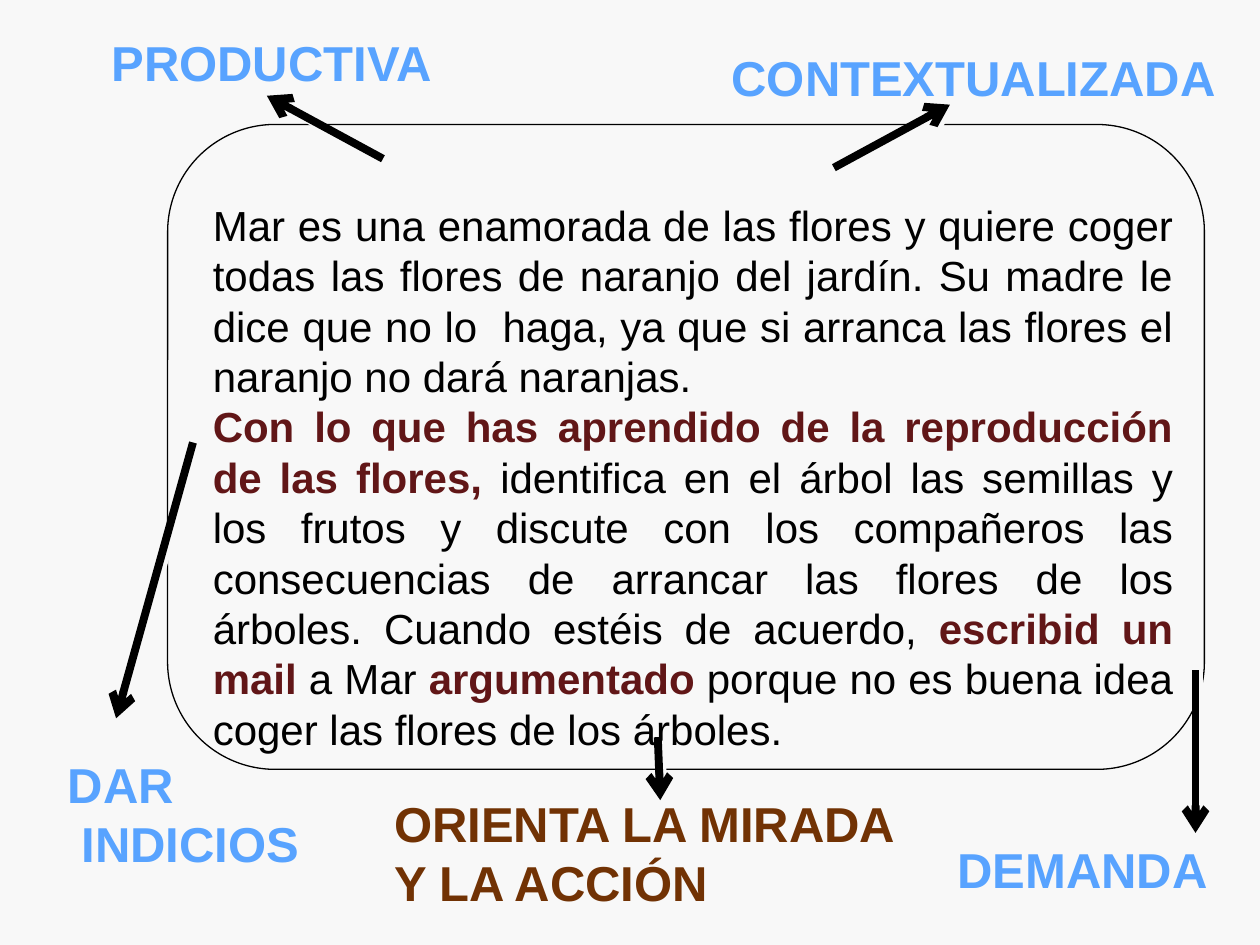
import pptx
import pptx.util
import pptx.dml.color
import pptx.enum.shapes
import pptx.enum.text
import pptx.oxml
import pptx.oxml.ns
from pptx.util import Cm, Pt

COLORS = {"back": "F8F8F8", "ink": "000000", "label": "58A3FF",
          "key": "611617", "focus": "713204"}


def rgb(name):
    return pptx.dml.color.RGBColor.from_string(COLORS[name])


def style(r, size, color, bold):
    r.font.name = "Arial"
    r.font.size = Pt(size)
    r.font.bold = bold
    r.font.color.rgb = rgb(color)


def add_text(shapes, box, wrap):
    tf = shapes.add_textbox(*(Cm(v) for v in box)).text_frame
    tf.word_wrap = wrap
    tf.auto_size = pptx.enum.text.MSO_AUTO_SIZE.SHAPE_TO_FIT_TEXT
    return tf


def add_arrow(shapes, tip, end):
    """Thick line with an open head at the tip and a pale hard shadow."""
    line = shapes.add_connector(pptx.enum.shapes.MSO_CONNECTOR.STRAIGHT,
                                *(Cm(v) for v in tip + end))
    line.line.width = Pt(4.5)
    line.line.color.rgb = rgb("ink")
    ns = pptx.oxml.ns.nsdecls("a")
    line.line._get_or_add_ln().append(
        pptx.oxml.parse_xml(f'<a:headEnd {ns} type="arrow"/>'))
    line._element.spPr.append(pptx.oxml.parse_xml(
        f'<a:effectLst {ns}><a:outerShdw dist="35921" dir="2700000" algn="ctr" '
        f'rotWithShape="0"><a:srgbClr val="{COLORS["back"]}"/></a:outerShdw></a:effectLst>'))


def add_callout(s, box, text, tip, end, color="label", wrap=False):
    """Label and its arrow; arrow points are relative to the label box."""
    shapes = s.shapes.add_group_shape().shapes
    tf = add_text(shapes, box, wrap)
    tf.text = text
    for p in tf.paragraphs:
        for r in p.runs:
            style(r, 28, color, True)
    add_arrow(shapes, *((box[0] + x, box[1] + y) for x, y in (tip, end)))


def add_frame(s, box):
    sp = s.shapes.add_shape(pptx.enum.shapes.MSO_SHAPE.ROUNDED_RECTANGLE,
                            *(Cm(v) for v in box))
    sp.shadow.inherit = False
    sp.fill.background()
    sp.line.color.rgb = rgb("ink")
    sp.line.width = Pt(0.75)


def add_task(s, box, paragraphs):
    tf = add_text(s.shapes, box, True)
    tf.vertical_anchor = pptx.enum.text.MSO_ANCHOR.MIDDLE
    for i, runs in enumerate(paragraphs):
        p = tf.paragraphs[0] if i == 0 else tf.add_paragraph()
        p.alignment = pptx.enum.text.PP_ALIGN.JUSTIFY
        for text, is_key in runs:
            r = p.add_run()
            r.text = text
            style(r, 24, "key" if is_key else "ink", is_key)


TASK = [
    [("Mar es una enamorada de las flores y quiere coger todas las flores de "
      "naranjo del jardín. Su madre le dice que no lo  haga, ya que si arranca "
      "las flores el naranjo no dará naranjas.", False)],
    [("Con lo que has aprendido de la reproducción de las flores, ", True),
     ("identifica en el árbol las semillas y los frutos y discute con los "
      "compañeros las consecuencias de arrancar las flores de los árboles. "
      "Cuando estéis de acuerdo, ", False),
     ("escribid un mail ", True),
     ("a Mar ", False),
     ("argumentado", True),
     (" porque no es buena idea coger las flores de los árboles.", False)],
]


def main():
    prs = pptx.Presentation()
    prs.slide_width, prs.slide_height = Cm(25.4), Cm(19.05)
    s = prs.slides.add_slide(prs.slide_layouts[6])
    s.background.fill.solid()
    s.background.fill.fore_color.rgb = rgb("back")

    # Frame around the task
    add_frame(s, (3.38, 2.51, 20.9, 13.0))

    # Features of a good question, each with its arrow
    add_callout(s, (2.0, 0.53, 7.04, 1.45), "PRODUCTIVA", (3.38, 1.4), (5.72, 2.67))
    add_callout(s, (14.5, 0.84, 10.39, 1.45), "CONTEXTUALIZADA", (4.65, 1.27), (2.31, 2.54))
    add_callout(s, (1.12, 15.09, 5.23, 2.64), "DAR\n INDICIOS", (1.22, -0.61), (2.77, -6.17))
    add_callout(s, (19.05, 16.79, 5.61, 1.45), "DEMANDA", (5.05, 0), (5.05, -3.28))

    # Task text
    add_task(s, (4.04, 3.84, 19.86, 11.53), TASK)

    # Purpose of the question
    add_callout(s, (7.7, 15.88, 11.2, 3.84), "ORIENTA LA MIRADA Y LA ACCIÓN",
                (5.61, 0.25), (5.56, -1.02), "focus", True)

    prs.save("out.pptx")


if __name__ == "__main__":
    main()
